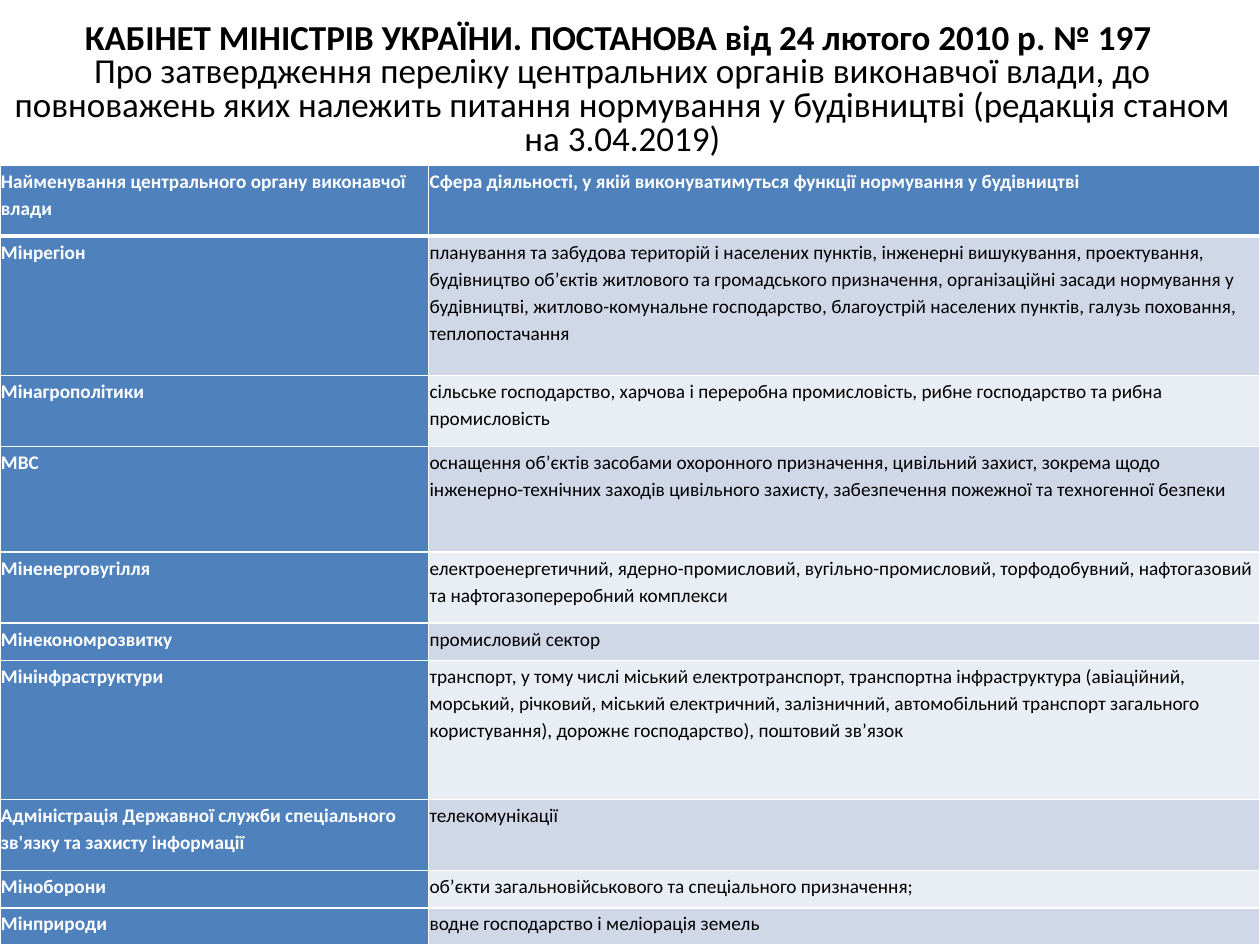
"""Build a slide listing the ministries responsible for construction standards."""
from dataclasses import dataclass

from lxml import etree
from pptx import Presentation
from pptx.dml.color import RGBColor
from pptx.enum.text import MSO_ANCHOR, PP_ALIGN
from pptx.oxml.ns import qn
from pptx.util import Cm, Pt

MIDDLE = MSO_ANCHOR.MIDDLE
CENTER = PP_ALIGN.CENTER


@dataclass(frozen=True)
class Theme:
    font: str = "Calibri"
    title_size: int = 20
    table_size: int = 11
    dark: str = "000000"
    light: str = "FFFFFF"
    accent: str = "4F81BD"
    bands: tuple = ("D0D8E8", "E9EDF4")
    rule: int = 1
    header_rule: int = 3


THEME = Theme()


def add_text(paragraph, text, size, color, bold):
    run = paragraph.add_run()
    run.text = text
    run.font.name = THEME.font
    run.font.size = Pt(size)
    run.font.bold = bold
    run.font.color.rgb = RGBColor.from_string(color)


def add_border(cell, side, width):
    line = etree.SubElement(cell._tc.get_or_add_tcPr(), qn(f"a:{side}"), w=str(Pt(width)))
    fill = etree.SubElement(line, qn("a:solidFill"))
    etree.SubElement(fill, qn("a:srgbClr"), val=THEME.light)


ROWS = [
    (1.43, "Найменування центрального органу виконавчої влади",
     "Сфера діяльності, у якій виконуватимуться функції нормування у будівництві"),
    (2.81, "Мінрегіон",
     "планування та забудова територій і населених пунктів, інженерні вишукування, "
     "проектування, будівництво об’єктів житлового та громадського призначення, "
     "організаційні засади нормування у будівництві, житлово-комунальне господарство, "
     "благоустрій населених пунктів, галузь поховання, теплопостачання"),
    (1.43, "Мінагрополітики",
     "сільське господарство, харчова і переробна промисловість, рибне господарство "
     "та рибна промисловість"),
    (2.13, "МВС",
     "оснащення об’єктів засобами охоронного призначення, цивільний захист, зокрема щодо "
     "інженерно-технічних заходів цивільного захисту, забезпечення пожежної та "
     "техногенної безпеки"),
    (1.43, "Міненерговугілля",
     "електроенергетичний, ядерно-промисловий, вугільно-промисловий, торфодобувний, "
     "нафтогазовий та нафтогазопереробний комплекси"),
    (0.75, "Мінекономрозвитку", "промисловий сектор"),
    (2.81, "Мінінфраструктури",
     "транспорт, у тому числі міський електротранспорт, транспортна інфраструктура "
     "(авіаційний, морський, річковий, міський електричний, залізничний, автомобільний "
     "транспорт загального користування), дорожнє господарство), поштовий зв’язок"),
    (1.43, "Адміністрація Державної служби спеціального зв'язку та захисту інформації",
     "телекомунікації"),
    (0.75, "Міноборони", "об’єкти загальновійськового та спеціального призначення;"),
    (0.75, "Мінприроди", "водне господарство і меліорація земель"),
]
COLUMN_WIDTHS = (8.64, 16.76)
TITLE_TOP, TITLE_HEIGHT, TABLE_TOP = 0.33, 3, 3.33

prs = Presentation()
prs.slide_width, prs.slide_height = Cm(25.4), Cm(19.05)
slide = prs.slides.add_slide(prs.slide_layouts[6])

title = slide.shapes.add_textbox(0, Cm(TITLE_TOP), Cm(25.1), Cm(TITLE_HEIGHT)).text_frame
title.word_wrap = True
title.vertical_anchor = MIDDLE
heading = title.paragraphs[0]
heading.alignment = CENTER
heading.line_spacing = 0.8
add_text(heading, "КАБІНЕТ МІНІСТРІВ УКРАЇНИ. ПОСТАНОВА від 24 лютого 2010 р. № 197 ",
         THEME.title_size, THEME.dark, True)
heading.add_line_break()
add_text(heading, "Про затвердження переліку центральних органів виконавчої влади, до "
         "повноважень яких належить питання нормування у будівництві "
         "(редакція станом на 3.04.2019)", THEME.title_size, THEME.dark, False)

table = slide.shapes.add_table(
    len(ROWS), len(COLUMN_WIDTHS), 0, Cm(TABLE_TOP),
    Cm(sum(COLUMN_WIDTHS)), Cm(sum(height for height, *_ in ROWS))).table
for column, width in zip(table.columns, COLUMN_WIDTHS):
    column.width = Cm(width)

for r, (height, *texts) in enumerate(ROWS):
    table.rows[r].height = Cm(height)
    for c, text in enumerate(texts):
        cell = table.cell(r, c)
        cell.margin_left = cell.margin_right = Cm(0.02)
        cell.margin_top = cell.margin_bottom = Cm(0.02)
        is_label = r == 0 or c == 0
        for side in ("lnL", "lnR", "lnT", "lnB"):
            under_header = (r, side) in ((0, "lnB"), (1, "lnT"))
            add_border(cell, side, THEME.header_rule if under_header else THEME.rule)
        cell.fill.solid()
        cell.fill.fore_color.rgb = RGBColor.from_string(
            THEME.accent if is_label else THEME.bands[(r - 1) % 2])
        entry = cell.text_frame.paragraphs[0]
        entry.line_spacing = 1.15
        add_text(entry, text, THEME.table_size,
                 THEME.light if is_label else THEME.dark, is_label)

prs.save("out.pptx")
